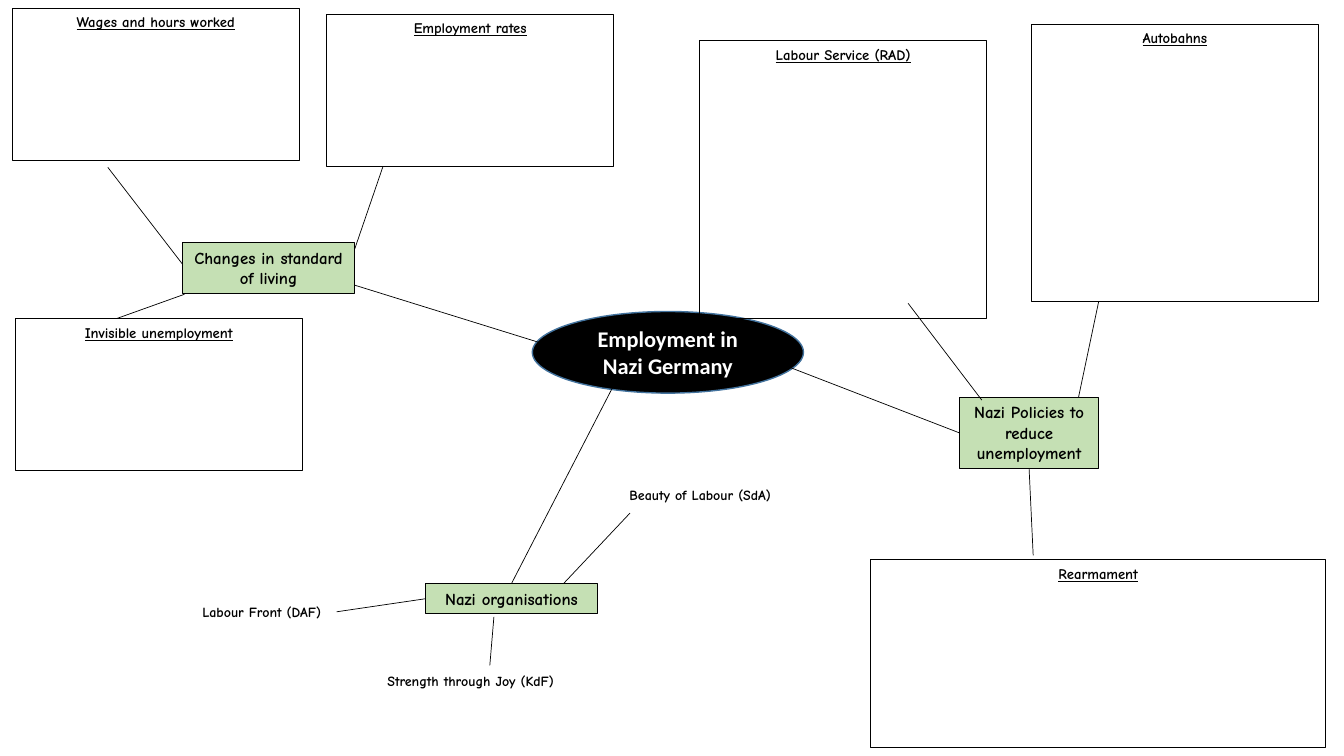
from dataclasses import dataclass
from typing import Optional

from lxml import etree
from pptx import Presentation
from pptx.dml.color import RGBColor
from pptx.enum import shapes, text
from pptx.oxml import ns
from pptx.util import Pt

COLOURS = {"black": "000000", "white": "FFFFFF", "green": "C5E0B4", "blue": "43739E"}
HAND_FONT = "Comic Neue"
NOTE_WIDTH, SHORT_NOTE, TALL_NOTE = 205.2, 108.7, 198
TOP, LEFT, BOTTOM = 0, 1, 2


@dataclass
class Box:
    wording: str
    left: float
    top: float
    width: float
    height: float
    size: float = 10.5
    font: str = HAND_FONT
    colour: str = "black"
    fill: Optional[str] = None
    line: Optional[str] = "black"
    line_width: float = 0.75
    underline: bool = False
    preset: shapes.MSO_SHAPE = shapes.MSO_SHAPE.RECTANGLE
    anchor: text.MSO_ANCHOR = text.MSO_ANCHOR.TOP


@dataclass
class Link:
    """A line; topic and side name the box side its start is joined to."""
    x1: float
    y1: float
    x2: float
    y2: float
    topic: Optional[str] = None
    side: int = TOP


def colour(name: str) -> RGBColor:
    return RGBColor.from_string(COLOURS[name])


def write(shape, box: Box) -> None:
    frame = shape.text_frame
    frame.text = box.wording
    para = frame.paragraphs[0]
    para.alignment = text.PP_ALIGN.CENTER
    span = para.runs[0].font
    span.name, span.size, span.bold = box.font, Pt(box.size), True
    span.underline = box.underline
    span.color.rgb = colour(box.colour)


def draw_box(page, box: Box):
    shape = page.shapes.add_shape(
        box.preset, Pt(box.left), Pt(box.top), Pt(box.width), Pt(box.height))
    shape.shadow.inherit = False
    if box.fill:
        shape.fill.solid()
        shape.fill.fore_color.rgb = colour(box.fill)
    else:
        shape.fill.background()
    shape.line.color.rgb = colour(box.line)
    shape.line.width = Pt(box.line_width)
    write(shape, box)
    shape.text_frame.word_wrap = True
    shape.text_frame.vertical_anchor = box.anchor
    return shape


def draw_label(page, box: Box) -> None:
    label = page.shapes.add_textbox(
        Pt(box.left), Pt(box.top), Pt(box.width), Pt(box.height))
    write(label, box)
    label.text_frame.word_wrap = False
    label.text_frame.auto_size = text.MSO_AUTO_SIZE.SHAPE_TO_FIT_TEXT


def draw_link(page, link: Link, topics: dict) -> None:
    line = page.shapes.add_connector(
        shapes.MSO_CONNECTOR.STRAIGHT,
        Pt(link.x1), Pt(link.y1), Pt(link.x2), Pt(link.y2))
    line.line.color.rgb = colour("black")
    line.line.width = Pt(0.5)
    etree.SubElement(line._element.spPr, ns.qn("a:effectLst"))
    if link.topic:
        line.begin_connect(topics[link.topic], link.side)


def topic(wording: str, left: float, top: float, width: float, height: float) -> Box:
    return Box(wording, left, top, width, height, size=12, fill="green")


def note(wording: str, left: float, top: float, height: float,
         width: float = NOTE_WIDTH) -> Box:
    return Box(wording, left, top, width, height, underline=True)


CENTRE = Box("Employment in Nazi Germany", 380.2, 222.5, 193.7, 58.3, size=16,
             font="Calibri", colour="white", fill="black", line="blue", line_width=1,
             preset=shapes.MSO_SHAPE.OVAL, anchor=text.MSO_ANCHOR.MIDDLE)

TOPICS = {
    "policies": topic("Nazi Policies to reduce unemployment", 685.4, 283.7, 99.4, 51.1),
    "living": topic("Changes in standard of living", 130.3, 173.5, 123.1, 36),
    "organisations": topic("Nazi organisations", 303.8, 416.9, 123.1, 21.6),
}

NOTES = [
    note("Wages and hours worked", 8.6, 5.8, SHORT_NOTE),
    note("Employment rates", 233.3, 10.1, SHORT_NOTE),
    note("Invisible unemployment", 10.8, 227.5, SHORT_NOTE),
    note("Labour Service (RAD)", 499.7, 29.2, TALL_NOTE),
    note("Autobahns", 736.6, 17.3, TALL_NOTE),
    note("Rearmament", 622.1, 399.6, 134.6, 324.7),
]

LABELS = [
    Box("Labour Front (DAF)", 131.8, 427.7, 110.2, 19.4, size=10),
    Box("Strength through Joy (KdF)", 260.6, 476.6, 151.2, 19.4, size=10),
    Box("Beauty of Labour (SdA)", 434.2, 344.2, 131.8, 19.4, size=10),
]

LINKS = [
    # From the topics to the centre
    Link(685.4, 309.2, 542.9, 254.2, "policies", LEFT),
    Link(253.4, 203.7, 390.2, 246.2),
    Link(365.4, 416.9, 438.5, 275, "organisations", TOP),
    # Policies
    Link(701.3, 285.8, 648.7, 216.7),
    Link(770.4, 283.7, 784.8, 215.3),
    Link(735.1, 334.8, 738, 396.7, "policies", BOTTOM),
    # Standard of living
    Link(130.3, 188.6, 77, 119.5),
    Link(253.4, 177.8, 273.6, 118.8),
    Link(131.8, 210.2, 83.5, 227.5),
    # Organisations
    Link(303.8, 427.7, 240.5, 437, "organisations", LEFT),
    Link(352.8, 440.6, 349.9, 475.2),
    Link(402.5, 416.9, 450, 366.5),
]


def main() -> None:
    deck = Presentation()
    deck.slide_width, deck.slide_height = Pt(960), Pt(540)
    page = deck.slides.add_slide(deck.slide_layouts[6])

    # Centre and topics
    draw_box(page, CENTRE)
    topics = {name: draw_box(page, box) for name, box in TOPICS.items()}

    # Notes and labels
    for box in NOTES:
        draw_box(page, box)
    for box in LABELS:
        draw_label(page, box)

    # Lines
    for link in LINKS:
        draw_link(page, link, topics)

    deck.save("out.pptx")


if __name__ == "__main__":
    main()
